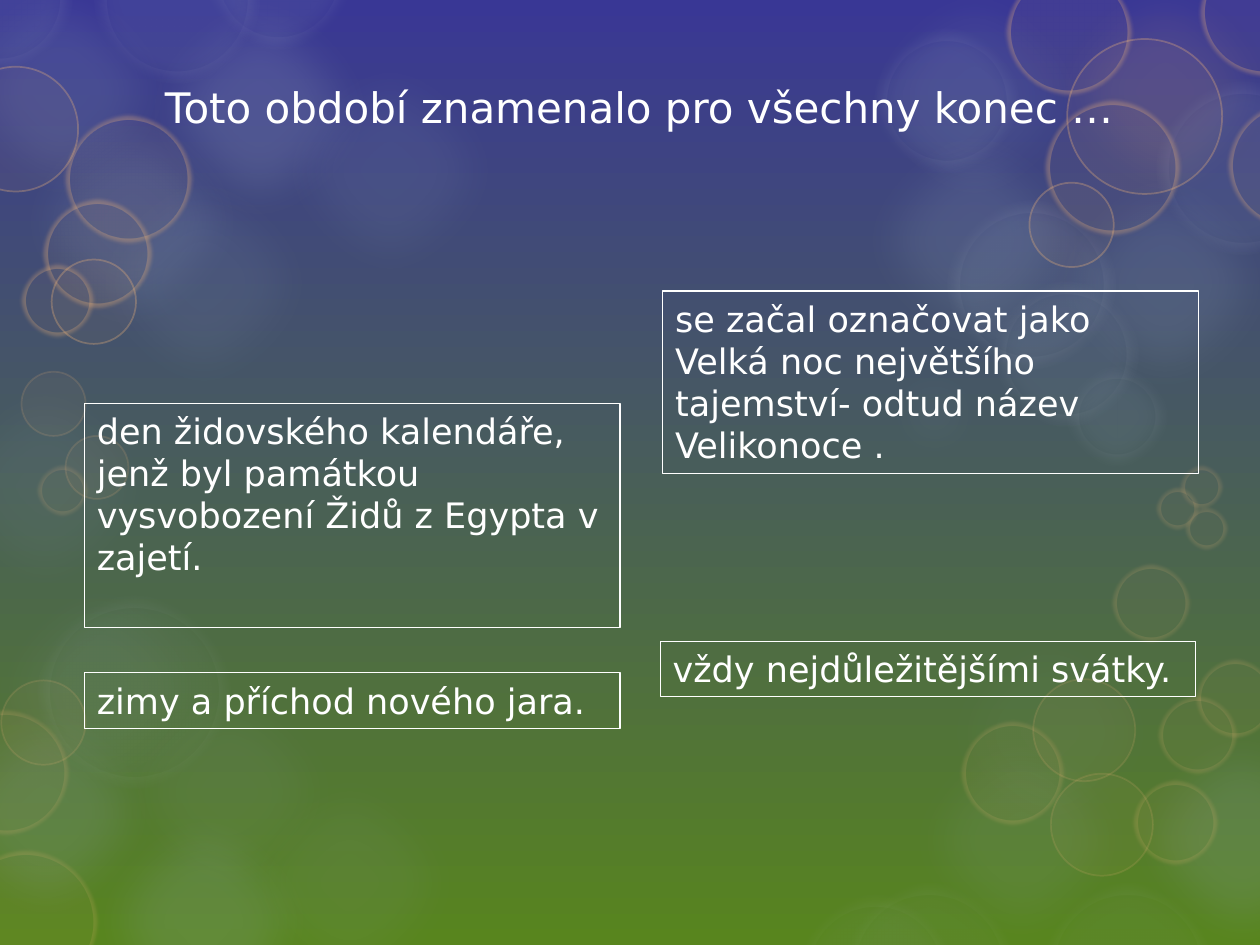
"""Builds a slide on the origin of Easter over a layout of soft light bubbles."""
from dataclasses import dataclass
from typing import Optional

from lxml import etree
from pptx import Presentation
from pptx.dml.color import RGBColor
from pptx.enum.shapes import MSO_SHAPE
from pptx.enum.text import MSO_ANCHOR, MSO_AUTO_SIZE, PP_ALIGN
from pptx.oxml.ns import qn
from pptx.util import Inches, Pt

OVAL, BOX = MSO_SHAPE.OVAL, MSO_SHAPE.RECTANGLE
TOP, NO_RESIZE = MSO_ANCHOR.TOP, MSO_AUTO_SIZE.NONE
LEFT, CENTER = PP_ALIGN.LEFT, PP_ALIGN.CENTER

TITLE_ONLY_LAYOUT = 5
FIRST_BUBBLE_ID = 100
WIDTH, HEIGHT = Inches(10), Inches(7.5)
COLUMNS = 100
UNIT = WIDTH // COLUMNS


@dataclass(frozen=True)
class Theme:
    font: str = "DejaVu Sans"
    title_size: float = 24
    body_size: float = 20
    border: float = 0.75
    text: str = "FFFFFF"
    sky: str = "393795"
    grass: str = "58851E"
    mist: str = "9BADC4"
    pale: str = "EFF2F5"
    gold: str = "F0B57A"


THEME = Theme()


@dataclass(frozen=True)
class Glow:
    fill: str
    opacity: int
    blur: float
    rim: Optional[str] = None
    rim_width: float = 0
    rim_opacity: int = 0


MIST = Glow(THEME.mist, 10, 25)
AMBER = Glow(THEME.gold, 10, 25)
HALO = Glow(THEME.mist, 10, 10, THEME.pale, 14, 6)
FAINT_HALO = Glow(THEME.mist, 6, 10, THEME.pale, 14, 4)
RING = Glow(THEME.gold, 5, 0, THEME.gold, 1, 30)
SOFT_RING = Glow(THEME.gold, 5, 2.5, THEME.gold, 5, 30)
DIM_RING = Glow(THEME.gold, 5, 0, THEME.gold, 1, 15)
DIM_SOFT_RING = Glow(THEME.gold, 5, 2.5, THEME.gold, 5, 15)


@dataclass(frozen=True)
class Bubble:
    glow: Glow
    column: float
    row: float
    size: float = 20.9
    opacity: Optional[int] = None


@dataclass(frozen=True)
class Passage:
    words: str
    column: float
    row: float
    columns: float
    rows: float


BUBBLES = [
    Bubble(MIST, -2.5, 44.2, opacity=8),
    Bubble(MIST, 5.7, 12),
    Bubble(MIST, 20.5, 3.1),
    Bubble(MIST, 5.7, 62.7, opacity=16),
    Bubble(MIST, -5.6, -3.2, opacity=14),
    Bubble(MIST, 10.1, -1.8, opacity=20),
    Bubble(MIST, 0, 7.2, opacity=15),
    Bubble(AMBER, 82, -3.2),
    Bubble(MIST, 66.9, -2.9),
    Bubble(MIST, 82, 12, opacity=15),
    Bubble(MIST, 88.1, 56.2, opacity=16),
    Bubble(MIST, 72.9, 47.7, opacity=5),
    Bubble(MIST, -6.8, 54.1, opacity=16),
    Bubble(MIST, 7.7, 52.4, opacity=8),
    Bubble(MIST, 66.9, 8.6, opacity=15),
    Bubble(MIST, 70.6, 56.2),
    Bubble(HALO, 91.8, 6.5, 13.7),
    Bubble(HALO, 69.4, 2.3, 11.4),
    Bubble(HALO, 75.2, 15.9, 13.3),
    Bubble(HALO, 78.9, 22.4, 11.4),
    Bubble(HALO, 84.7, 29.1, 7.9),
    Bubble(HALO, 7.5, -6.5, 13.1),
    Bubble(HALO, 16.4, -7.5, 11.4),
    Bubble(HALO, -5.7, -5.8, 11.4),
    Bubble(FAINT_HALO, 3, 47.3, 15.3),
    Bubble(FAINT_HALO, 63.2, 71, 12.5),
    Bubble(FAINT_HALO, 66.9, 70.1, 13.7),
    Bubble(FAINT_HALO, 82.7, 70.1, 13.6),
    Bubble(DIM_RING, 0.1, 54, 6.7),
    Bubble(DIM_SOFT_RING, -3.6, 67.5, 11.3),
    Bubble(DIM_SOFT_RING, -4.4, 56.4, 9.8),
    Bubble(RING, -3.7, 5.3, 9.9),
    Bubble(SOFT_RING, 5.2, 9.2, 10),
    Bubble(SOFT_RING, 3.5, 15.9, 8.5),
    Bubble(RING, 4.1, 20.6, 6.7),
    Bubble(SOFT_RING, 1.7, 21, 5.7),
    Bubble(SOFT_RING, 79.9, -2.4, 9.9),
    Bubble(SOFT_RING, 95.3, -4, 10),
    Bubble(RING, 84.7, 3.1, 12.3),
    Bubble(SOFT_RING, 97.5, 8.2, 9.9),
    Bubble(SOFT_RING, 83, 8, 10.6),
    Bubble(RING, 81.7, 14.5, 6.7),
    Bubble(DIM_RING, 83.4, 61.4, 8.1),
    Bubble(DIM_SOFT_RING, 76.3, 57.3, 8.1),
    Bubble(DIM_RING, 82, 53.9, 8.1),
    Bubble(DIM_SOFT_RING, 90, 62, 6.6),
    Bubble(DIM_SOFT_RING, 88.3, 44.8, 6.1),
    Bubble(DIM_SOFT_RING, 92, 55.3, 6.1),
    Bubble(DIM_SOFT_RING, 95, 52.4, 6.1),
    Bubble(MIST, 17.3, 59.6, opacity=8),
    Bubble(DIM_SOFT_RING, 93.7, 37, 3.3),
    Bubble(DIM_SOFT_RING, 91.8, 38.7, 3.3),
    Bubble(DIM_SOFT_RING, 94.1, 40.3, 3.3),
    Bubble(DIM_RING, 1.7, 29.5, 5.1),
    Bubble(DIM_RING, 5.2, 34.6, 5),
    Bubble(DIM_SOFT_RING, 3, 37, 3.9),
    Bubble(MIST, -6.9, 28.2, opacity=8),
    Bubble(MIST, 67.5, 26.2, 13.3),
]

HEADLINE = Passage("Toto období znamenalo pro všechny konec …", 11.4, 6, 78.7, 5)
PASSAGES = [
    Passage("den židovského kalendáře, jenž byl památkou vysvobození Židů z Egypta v zajetí.",
            6.7, 32, 42.5, 17.8),
    Passage("vždy nejdůležitějšími svátky.", 52.4, 50.9, 42.5, 4.4),
    Passage("se začal označovat jako Velká noc největšího tajemství- odtud název Velikonoce .",
            52.6, 23.1, 42.5, 14.5),
    Passage("zimy a příchod nového jara.", 6.7, 53.4, 42.5, 4.4),
]


def grid(*cells: float) -> list[int]:
    """Turn grid cells into slide lengths."""
    return [round(cell * UNIT) for cell in cells]


def draw_bubble(shapes, bubble: Bubble):
    """Draw one translucent bubble with its rim and blurred edge."""
    glow = bubble.glow
    disc = shapes.add_shape(OVAL, *grid(bubble.column, bubble.row, bubble.size, bubble.size))
    disc.shadow.inherit = False
    disc.fill.solid()
    disc.fill.fore_color.rgb = RGBColor.from_string(glow.fill)
    if glow.rim:
        disc.line.color.rgb = RGBColor.from_string(glow.rim)
        disc.line.width = Pt(glow.rim_width)
    else:
        disc.line.fill.background()
    properties = disc._element.spPr
    opacities = (bubble.opacity or glow.opacity, glow.rim_opacity)
    for color, opacity in zip(properties.iter(qn("a:srgbClr")), opacities):
        etree.SubElement(color, qn("a:alpha"), val=str(opacity * 1000))
    if glow.blur:
        effects = properties.find(qn("a:effectLst"))
        etree.SubElement(effects, qn("a:softEdge"), rad=str(Pt(glow.blur)))
    return disc


def decorate_layout(slide) -> None:
    """Draw the bubbles and move them to the layout behind the slide."""
    discs = [draw_bubble(slide.shapes, bubble) for bubble in BUBBLES]
    for number, disc in enumerate(discs, FIRST_BUBBLE_ID):
        disc._element.nvSpPr.cNvPr.set("id", str(number))
        slide.slide_layout.shapes._spTree.append(disc._element)


def write(holder, words: str, size: float, align) -> None:
    """Set the words of a shape in the theme's font."""
    frame = holder.text_frame
    frame.word_wrap = True
    frame.auto_size = NO_RESIZE
    frame.vertical_anchor = TOP
    paragraph = frame.paragraphs[0]
    paragraph.alignment = align
    run = paragraph.add_run()
    run.text = words
    run.font.name = THEME.font
    run.font.size = Pt(size)
    run.font.color.rgb = RGBColor.from_string(THEME.text)


def draw_passage(shapes, passage: Passage) -> None:
    """Draw one outlined passage."""
    panel = shapes.add_shape(
        BOX, *grid(passage.column, passage.row, passage.columns, passage.rows))
    panel.shadow.inherit = False
    panel.fill.background()
    panel.line.color.rgb = RGBColor.from_string(THEME.text)
    panel.line.width = Pt(THEME.border)
    write(panel, passage.words, THEME.body_size, LEFT)


def draw_headline(headline, passage: Passage) -> None:
    """Place and fill the title."""
    headline.left, headline.top, headline.width, headline.height = grid(
        passage.column, passage.row, passage.columns, passage.rows)
    write(headline, passage.words, THEME.title_size, CENTER)


def main() -> None:
    """Build and save the slide."""
    deck = Presentation()
    deck.slide_width, deck.slide_height = WIDTH, HEIGHT
    slide = deck.slides.add_slide(deck.slide_layouts[TITLE_ONLY_LAYOUT])
    backdrop = slide.background.fill
    backdrop.gradient()
    backdrop.gradient_angle = 270
    for stop, color in zip(backdrop.gradient_stops, (THEME.sky, THEME.grass)):
        stop.color.rgb = RGBColor.from_string(color)
    decorate_layout(slide)
    draw_headline(slide.shapes.title, HEADLINE)
    for passage in PASSAGES:
        draw_passage(slide.shapes, passage)
    deck.save("out.pptx")


if __name__ == "__main__":
    main()
